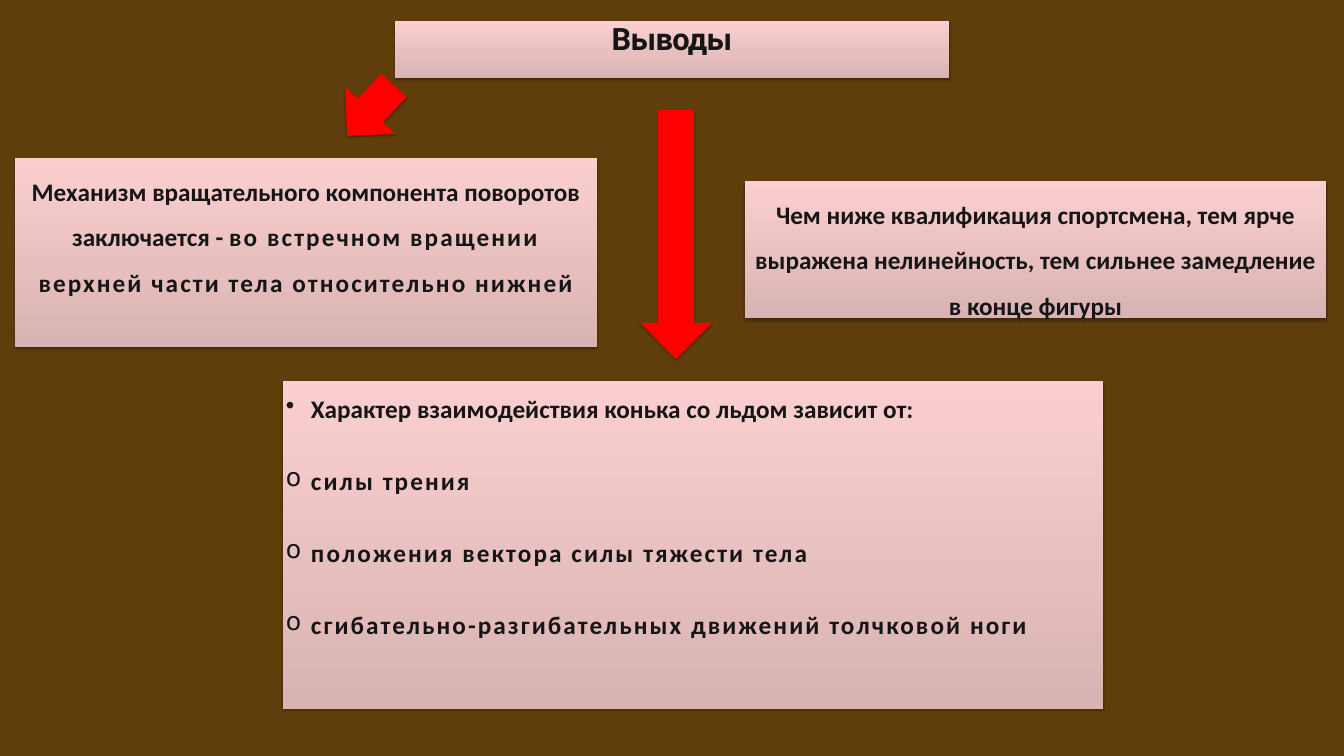
from lxml import etree
from pptx import Presentation
from pptx import util as u
from pptx.dml.color import RGBColor
from pptx.enum import shapes, text
from pptx.oxml.ns import qn

PX = 914400 / 50.4
INK, RED, BROWN = "151515", "FF0000", "5F3E0C"
PINK_BOTTOM, PINK_TOP = "D9B3B3", "FBCFCF"


def paint(color, value):
    color.rgb = RGBColor.from_string(value)


def add_shadowed(kind, bounds):
    """Add a shape without outline that casts a soft shadow downwards."""
    shape = page.shapes.add_shape(kind, *[u.Emu(round(n * PX)) for n in bounds])
    shape.line.fill.background()
    shape.shadow.inherit = False
    effects = shape._element.spPr.find(qn("a:effectLst"))
    shadow = etree.SubElement(effects, qn("a:outerShdw"), blurRad=str(u.Pt(3.5)),
                              dist=str(u.Pt(2.2)), dir="5400000", rotWithShape="0")
    black = etree.SubElement(shadow, qn("a:srgbClr"), val="000000")
    etree.SubElement(black, qn("a:alpha"), val="32000")
    return shape


deck = Presentation()
deck.slide_width, deck.slide_height = u.Emu(round(1344 * PX)), u.Emu(round(756 * PX))
page = deck.slides.add_slide(deck.slide_layouts[6])
page.background.fill.solid()
paint(page.background.fill.fore_color, BROWN)

# Each paragraph is (bullet, runs), each run is (wording, letter spacing in points)
factors = [
    ("•", [("Характер взаимодействия конька со льдом зависит от:", 0)]),
    ("o", [("силы трения", 3)]),
    ("o", [("положения вектора силы тяжести тела", 3)]),
    ("o", [("сгибательно-разгибательных движений толчковой ноги", 3)]),
]
heading = [("", [("Выводы", -1)])]
mechanism = [("", [
    ("Механизм вращательного компонента поворотов заключается - ", 0),
    ("во встречном вращении верхней части тела относительно нижней", 3),
])]
skill = [("", [("Чем ниже квалификация спортсмена, тем ярче выражена нелинейность, "
                "тем сильнее замедление в конце фигуры", 0)])]

# bounds, side inset, top inset, line spacing, font, size, paragraphs
panels = [
    ((283, 381, 820, 328), 3, 3, 1.3, "Calibri", 36, factors),
    ((395, 21, 554, 57), 3, 3, 0.9, "Roboto", 44, heading),
    ((15, 158, 582, 189), 5, 3, 1.5, "Calibri", 36, mechanism),
    ((745, 181, 581, 137), 5, 3, 1.5, "Calibri", 36, skill),
]
for bounds, side, top, leading, font, size, paragraphs in panels:
    box = add_shadowed(shapes.MSO_SHAPE.RECTANGLE, bounds)
    box.fill.gradient()
    box.fill.gradient_angle = 90
    for stop, position, shade in zip(box.fill.gradient_stops, (0, 1), (PINK_BOTTOM, PINK_TOP)):
        stop.position = position
        paint(stop.color, shade)

    frame = box.text_frame
    frame.word_wrap = True
    frame.vertical_anchor = text.MSO_ANCHOR.TOP
    frame.margin_left = frame.margin_right = u.Emu(round(side * PX))
    frame.margin_top = frame.margin_bottom = u.Emu(round(top * PX))
    for index, (bullet, runs) in enumerate(paragraphs):
        para = frame.add_paragraph() if index else frame.paragraphs[0]
        para.alignment = text.PP_ALIGN.LEFT if bullet else text.PP_ALIGN.CENTER
        para.line_spacing = leading
        if index:
            para.space_before = u.Pt(47)
        if bullet:
            layout = para._p.get_or_add_pPr()
            indent = round(25 * PX)
            layout.set("marL", str(indent))
            layout.set("indent", str(-indent))
            etree.SubElement(layout, qn("a:buChar"), char=bullet)
        for wording, tracking in runs:
            span = para.add_run()
            span.text = wording
            span.font.name, span.font.size, span.font.bold = font, u.Pt(size), True
            paint(span.font.color, INK)
            if tracking:
                span._r.get_or_add_rPr().set("spc", str(tracking * 100))

for bounds, turn in [((336, 76, 69, 69), 42.8), ((640, 110, 72, 249), 0)]:
    arrow = add_shadowed(shapes.MSO_SHAPE.DOWN_ARROW, bounds)
    arrow.rotation = turn
    arrow.fill.solid()
    paint(arrow.fill.fore_color, RED)

deck.save("out.pptx")
